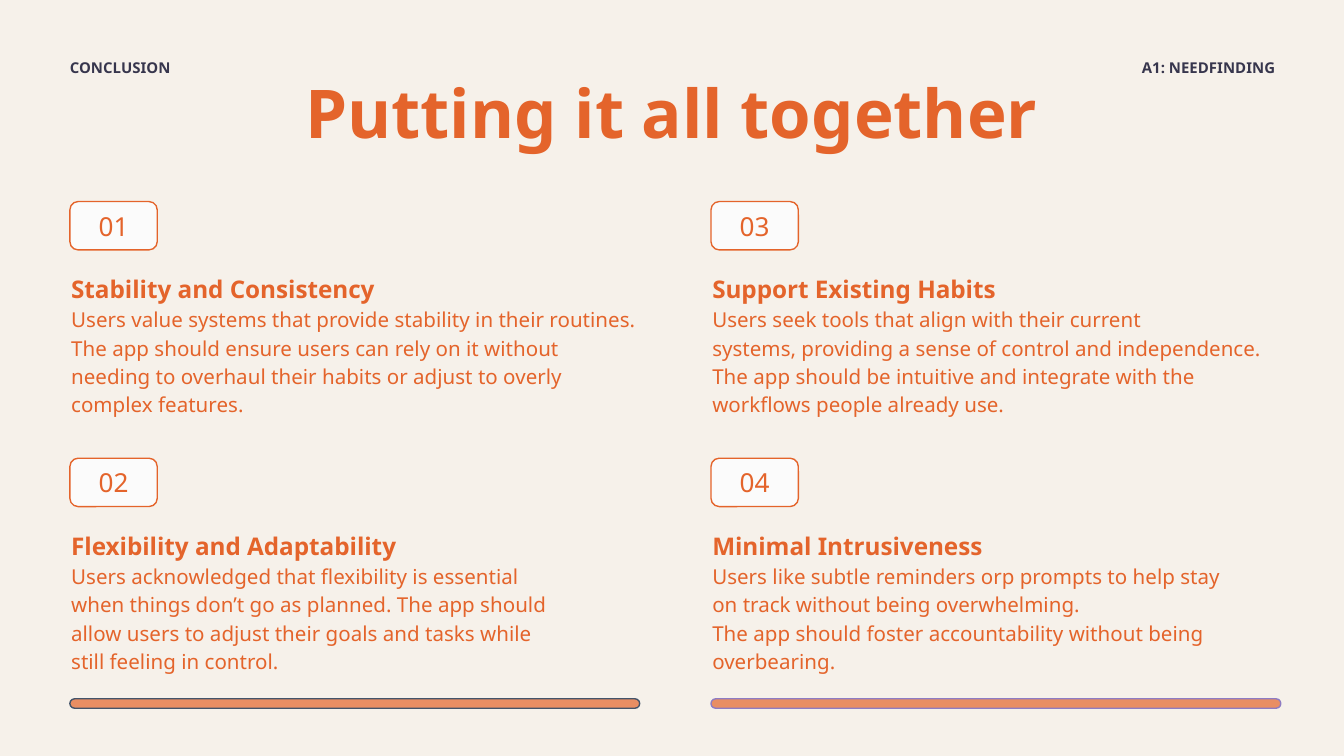
from dataclasses import dataclass

from lxml.etree import SubElement
from pptx import Presentation
from pptx.dml.color import RGBColor as RGB
from pptx.enum.shapes import MSO_SHAPE as Shape
from pptx.enum.text import MSO_ANCHOR as Anchor, PP_ALIGN as Align
from pptx.oxml.ns import qn
from pptx.util import Inches, Pt


@dataclass(frozen=True)
class Theme:
    font: str = "Noto Sans"
    paper: str = "F6F1EA"
    orange: str = "E4642B"
    ink: str = "37364D"
    badge: str = "FBFBFB"
    slate: str = "44546A"
    violet: str = "8E7CC3"
    title: int = 36
    number: int = 14
    heading: int = 13
    body: int = 11
    label: int = 8
    outline: float = 0.75


class Deck:
    """Draws the elements of one slide in a shared theme."""

    def __init__(self, prs, theme):
        self.theme = theme
        self.s = prs.slides.add_slide(prs.slide_layouts[6])
        fill = self.s.background.fill
        fill.solid()
        fill.fore_color.rgb = RGB.from_string(theme.paper)

    def run(self, p, text, size, color, bold=False):
        r = p.add_run()
        r.text = text
        r.font.name = self.theme.font
        r.font.size = Pt(size)
        r.font.bold = bold
        r.font.color.rgb = RGB.from_string(color)

    def frame(self, x, y, w, h, anchor=Anchor.TOP):
        tf = self.s.shapes.add_textbox(Inches(x), Inches(y), Inches(w), Inches(h)).text_frame
        tf.word_wrap = True
        tf.vertical_anchor = anchor
        tf.margin_left = tf.margin_right = tf.margin_top = tf.margin_bottom = 0
        return tf

    def title(self, text):
        p = self.frame(1.31, 0.53, 7.37, 0.6, Anchor.MIDDLE).paragraphs[0]
        p.alignment = Align.CENTER
        self.run(p, text, self.theme.title, self.theme.orange, True)

    def label(self, text, x, align):
        p = self.frame(x, 0.38, 1.56, 0.16).paragraphs[0]
        p.alignment = align
        p.line_spacing = 1.41
        self.run(p, text, self.theme.label, self.theme.ink, True)

    def rounded(self, x, y, w, h, radius, fill, line):
        sp = self.s.shapes.add_shape(
            Shape.ROUNDED_RECTANGLE, Inches(x), Inches(y), Inches(w), Inches(h))
        sp.shadow.inherit = False
        sp.adjustments[0] = radius
        sp.fill.solid()
        sp.fill.fore_color.rgb = RGB.from_string(fill)
        sp.line.color.rgb = RGB.from_string(line)
        sp.line.width = Pt(self.theme.outline)
        return sp

    def badge(self, text, x, y):
        t = self.theme
        tf = self.rounded(x, y, 0.65, 0.36, 0.17, t.badge, t.orange).text_frame
        tf.vertical_anchor = Anchor.MIDDLE
        tf.margin_left = tf.margin_right = tf.margin_top = tf.margin_bottom = Inches(0.1)
        p = tf.paragraphs[0]
        p.alignment = Align.CENTER
        self.run(p, text, t.number, t.orange)

    def insight(self, heading, lines, x, y, w):
        t = self.theme
        tf = self.frame(x, y, w, 1.11)
        p = tf.paragraphs[0]
        p.line_spacing = 1.15
        self.run(p, heading, t.heading, t.orange, True)
        p = tf.add_paragraph()
        p.line_spacing = 1.15
        for i, line in enumerate(lines):
            if i:
                p.add_line_break()
            self.run(p, line, t.body, t.orange)

    def bar(self, x, line):
        sp = self.rounded(x, 5.2, 4.24, 0.07, 0.5, self.theme.orange, line)
        color = sp.element.spPr.find(qn("a:solidFill"))[0]
        SubElement(color, qn("a:alpha")).set("val", "70000")


INSIGHTS = [
    ("Stability and Consistency", 4.24, [
        "Users value systems that provide stability in their routines. The app should ensure "
        "users can rely on it without needing to overhaul their habits or adjust to overly "
        "complex features."]),
    ("Flexibility and Adaptability", 4.24, [
        "Users acknowledged that flexibility is essential",
        "when things don’t go as planned. The app should",
        "allow users to adjust their goals and tasks while",
        "still feeling in control."]),
    ("Support Existing Habits", 4.14, [
        "Users seek tools that align with their current",
        "systems, providing a sense of control and independence. The app should be intuitive "
        "and integrate with the workflows people already use."]),
    ("Minimal Intrusiveness", 3.8, [
        "Users like subtle reminders orp prompts to help stay on track without being "
        "overwhelming.",
        "The app should foster accountability without being overbearing."]),
]


def main():
    prs = Presentation()
    prs.slide_width = Inches(10)
    prs.slide_height = prs.slide_width * 9 // 16
    theme = Theme()
    deck = Deck(prs, theme)
    columns, top, pitch = (0.52, 5.29), 1.5, 1.91

    deck.title("Putting it all together")
    deck.label("CONCLUSION", columns[0], Align.LEFT)
    deck.label("A1: NEEDFINDING", 7.93, Align.RIGHT)
    for i, (heading, width, lines) in enumerate(INSIGHTS):
        col, row = divmod(i, 2)
        x, y = columns[col], top + row * pitch
        deck.badge(f"{i + 1:02d}", x, y)
        deck.insight(heading, lines, x + 0.01, y + 0.51, width)
    for x, line in zip(columns, (theme.slate, theme.violet)):
        deck.bar(x, line)
    prs.save("out.pptx")


if __name__ == "__main__":
    main()
